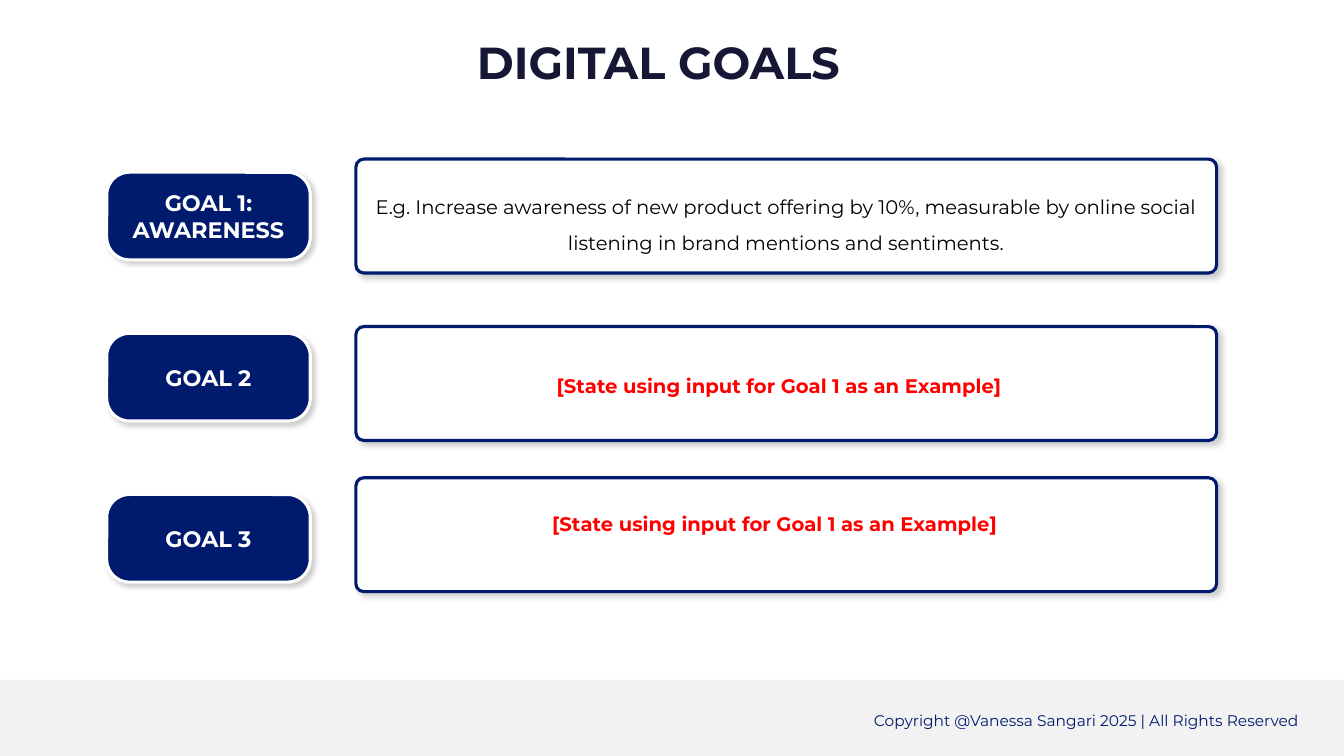
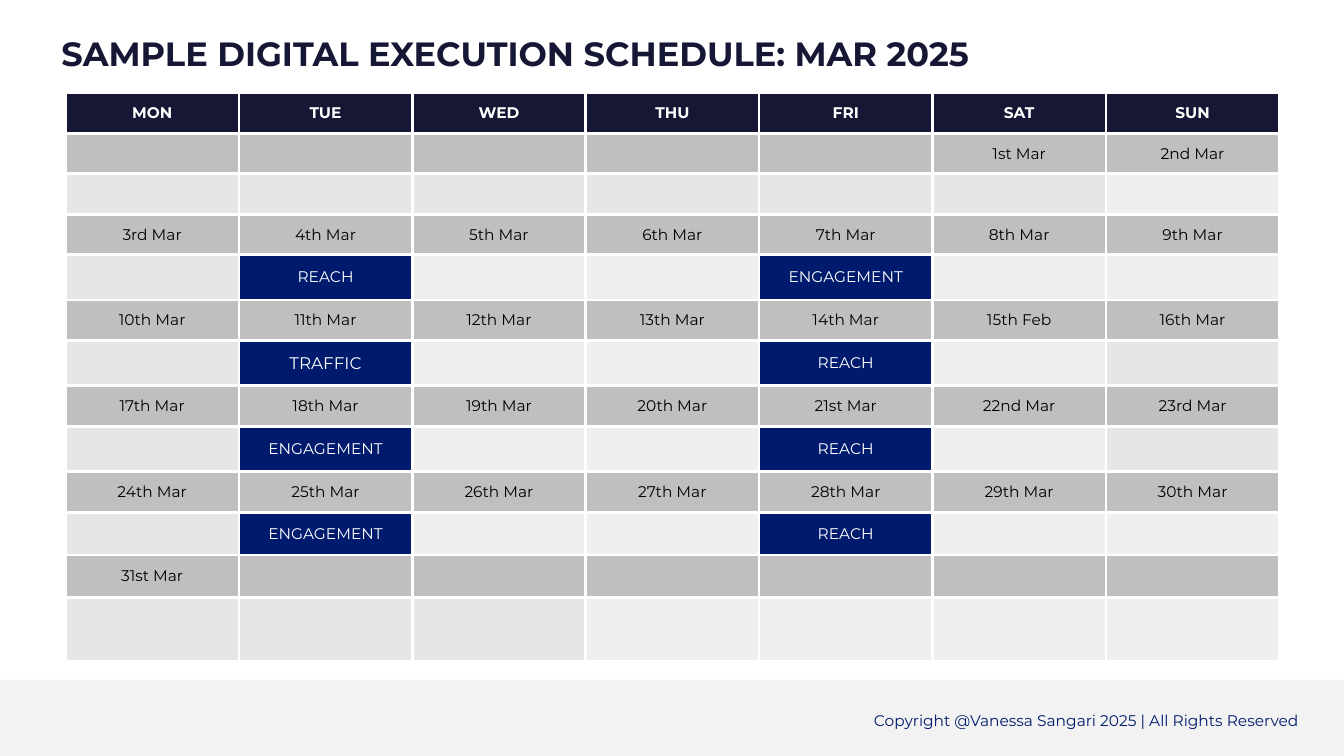
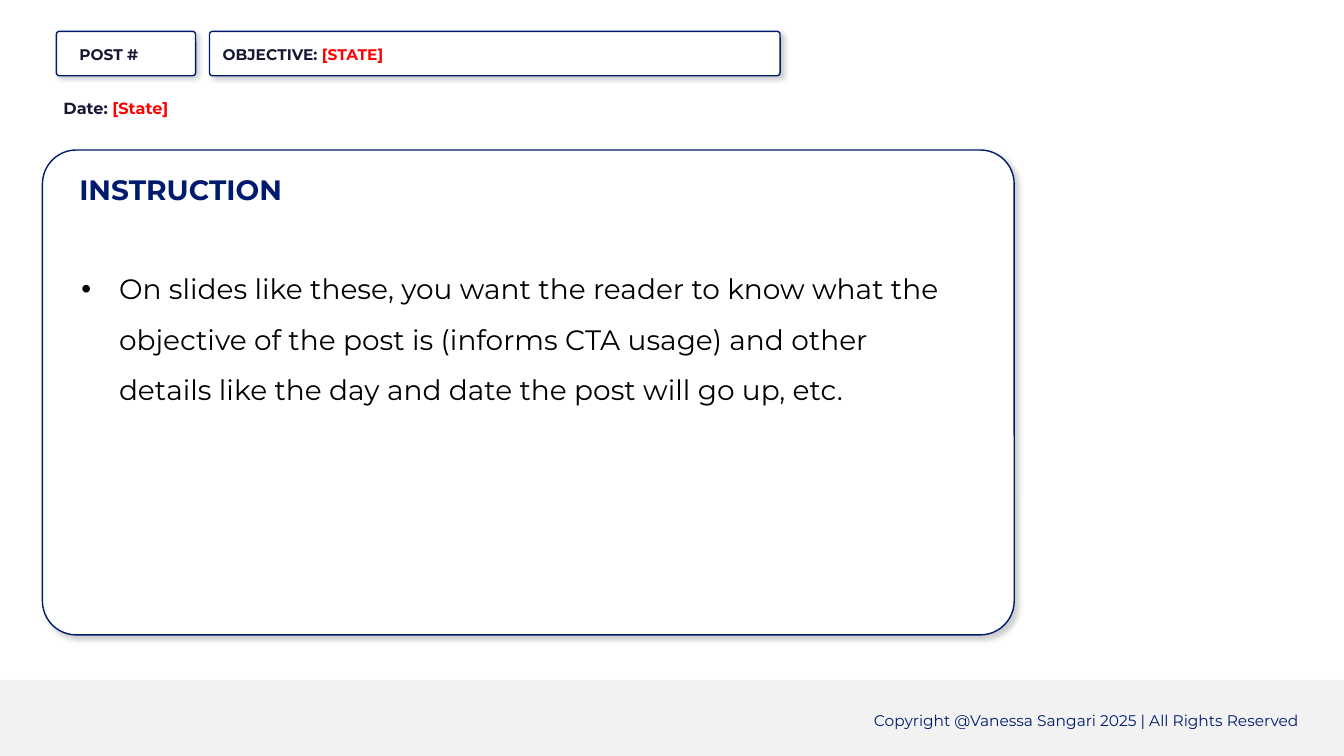
"""Build three slides of a digital marketing plan."""
import lxml.etree
import pptx
import pptx.dml.color
import pptx.enum.shapes
import pptx.enum.text
import pptx.oxml.ns
import pptx.util

Cm = pptx.util.Cm
Pt = pptx.util.Pt
ALIGN = pptx.enum.text.PP_ALIGN
MIDDLE = pptx.enum.text.MSO_ANCHOR.MIDDLE
SHAPE = pptx.enum.shapes.MSO_SHAPE

FONT = "Montserrat"
NAVY, INK, RED = "001B6D", "161735", "FF0000"
WHITE, BLACK, BAND = "FFFFFF", "000000", "F2F2F2"
SHADES = {"H": INK, "D": "BFBFBF", "E": "E7E6E6", "F": "EFEFEF", "N": NAVY}
CENTER = {"alignment": ALIGN.CENTER}
WIDE = {"alignment": ALIGN.CENTER, "line_spacing": 1.5}
SNUG = {"line_spacing": 1.15}

DAYS = "MON,TUE,WED,THU,FRI,SAT,SUN"
WEEKS = [
    (",,,,,1st Mar,2nd Mar", "EEEEEEF", ""),
    ("3rd Mar,4th Mar,5th Mar,6th Mar,7th Mar,8th Mar,9th Mar",
     "ENFFNFF", ",REACH,,,ENGAGEMENT,,"),
    ("10th Mar,11th Mar,12th Mar,13th Mar,14th Mar,15th Feb,16th Mar",
     "ENFFNFE", ",TRAFFIC,,,REACH,,"),
    ("17th Mar,18th Mar,19th Mar,20th Mar,21st Mar,22nd Mar,23rd Mar",
     "ENFFNFE", ",ENGAGEMENT,,,REACH,,"),
    ("24th Mar,25th Mar,26th Mar,27th Mar,28th Mar,29th Mar,30th Mar",
     "ENFFNFF", ",ENGAGEMENT,,,REACH,,"),
    ("31st Mar,,,,,,", "EEEFFFF", ""),
]
HEIGHTS = [1.02] * 4 + [1.14, 1.02] * 2 + [1.14, 1.04, 1.07, 1.07, 1.6]


def tint(code):
    return pptx.dml.color.RGBColor.from_string(code)


def apply(thing, values):
    for name, value in values.items():
        setattr(thing, name, value)


def node(parent, tag, **attrs):
    return lxml.etree.SubElement(parent, pptx.oxml.ns.qn(tag), attrs)


def paint(fill, code):
    fill.solid()
    fill.fore_color.rgb = tint(code)


def write(frame, lines, size, bold=False, look=None):
    for index, line in enumerate(lines):
        para = frame.add_paragraph() if index else frame.paragraphs[0]
        apply(para, look or {})
        for words, code in line:
            run = para.add_run()
            run.text = words
            apply(run.font, {"name": FONT, "size": Pt(size), "bold": bold})
            run.font.color.rgb = tint(code)


def label(slide, at, parts, size, bold=False, look=None):
    box = slide.shapes.add_textbox(*map(Cm, at))
    box.text_frame.word_wrap = True
    write(box.text_frame, [parts], size, bold, look)
    return box


def shade(shape):
    shape.shadow.inherit = False
    effects = shape.element.spPr.find(pptx.oxml.ns.qn("a:effectLst"))
    outer = node(effects, "a:outerShdw", blurRad=str(Pt(4)), dist=str(Pt(3)),
                 dir="2700000", algn="tl", rotWithShape="0")
    color = node(outer, "a:srgbClr", val=BLACK)
    node(color, "a:alpha", val="20000")


def panel(slide, at, curve, weight, fill=WHITE, edge=NAVY):
    shape = slide.shapes.add_shape(SHAPE.ROUNDED_RECTANGLE, *map(Cm, at))
    shape.adjustments[0] = curve
    paint(shape.fill, fill)
    shape.line.color.rgb = tint(edge)
    shape.line.width = Pt(weight)
    shade(shape)
    return shape


def pill(slide, top, lines):
    shape = panel(slide, (2.69, top, 5.13, 2.21), 0.26, 2.25, NAVY, WHITE)
    frame = shape.text_frame
    apply(frame, {"word_wrap": True, "vertical_anchor": MIDDLE})
    write(frame, [[(line, WHITE)] for line in lines], 16, True, CENTER)


def title(slide, at, words, size, look=None):
    label(slide, at, [(words, INK)], size, True, look)


def footer(slide, layout):
    band = slide.shapes.add_shape(SHAPE.RECTANGLE, 0, Cm(17.13), Cm(33.87), Cm(1.92))
    paint(band.fill, BAND)
    band.line.fill.background()
    band.shadow.inherit = False
    note = label(slide, (14.45, 17.55, 18.54, 0.9),
                 [("Copyright @Vanessa Sangari 2025 | All Rights Reserved", NAVY)],
                 11, look={"alignment": ALIGN.RIGHT, "line_spacing": 1.5})
    for shape in (band, note):
        layout.shapes.element.append(shape.element)


def bullet(para, indent):
    props = para._p.get_or_add_pPr()
    apply_to = {"marL": str(Cm(indent)), "indent": str(-Cm(indent))}
    props.attrib.update(apply_to)
    node(node(props, "a:buClr"), "a:srgbClr", val=BLACK)
    node(props, "a:buFont", typeface="Arial")
    node(props, "a:buChar", char="•")


def border(cell):
    props = cell._tc.get_or_add_tcPr()
    for side in "LRTB":
        line = node(props, "a:ln" + side, w=str(Pt(2.25)))
        node(node(line, "a:solidFill"), "a:srgbClr", val=WHITE)


def fill_row(table, row, words, shades, code, bold=False):
    for col, (word, key) in enumerate(zip(words, shades)):
        cell = table.cell(row, col)
        apply(cell, {"margin_top": 0, "margin_bottom": 0, "vertical_anchor": MIDDLE})
        border(cell)
        paint(cell.fill, SHADES[key])
        if word:
            size = 12 if word == "TRAFFIC" else 11
            write(cell.text_frame, [[(word, code)]], size, bold, CENTER)


def goals(slide):
    title(slide, (3.36, 0.76, 26.47, 1.63), "DIGITAL GOALS", 32, CENTER)
    names = [["GOAL 1:", "AWARENESS"], ["GOAL 2"], ["GOAL 3"]]
    for index, (lines, top) in enumerate(zip(names, (4.01, 8.23, 12.04))):
        pill(slide, 4.34 + 4.06 * index, lines)
        panel(slide, (8.97, top, 21.69, 2.87), 0.07, 2.25)
    label(slide, (8.97, 4.5, 21.69, 1.96),
          [("E.g. Increase awareness of new product offering by 10%, measurable "
            "by online social listening in brand mentions and sentiments.", BLACK)],
          14, look=WIDE)
    for at in ((8.61, 8.99, 22.05, 1.04), (8.97, 12.47, 21.11, 1.04)):
        label(slide, at, [("[State using input for Goal 1 as an Example]", RED)],
              14, True, WIDE)


def schedule(slide):
    frame = slide.shapes.add_table(len(HEIGHTS), 7, Cm(1.65), Cm(2.34),
                                   Cm(30.59), Cm(sum(HEIGHTS)))
    table = frame.table
    for col in table.columns:
        col.width = Cm(4.37)
    for row, height in zip(table.rows, HEIGHTS):
        row.height = Cm(height)
    fill_row(table, 0, DAYS.split(","), "H" * 7, WHITE, True)
    for week, (dates, shades, posts) in enumerate(WEEKS):
        row = 2 * week + 1
        fill_row(table, row, dates.split(","), "D" * 7, BLACK)
        fill_row(table, row + 1, posts.split(",") if posts else [""] * 7, shades, WHITE)
    title(slide, (1.3, 0.71, 30.94, 1.27),
          "SAMPLE DIGITAL EXECUTION SCHEDULE: MAR 2025", 24)


def post(slide):
    label(slide, (1.35, 2.29, 15.65, 0.94),
          [("Date: ", INK), ("[State]", RED)], 11.5, True, SNUG)
    for left, width in ((1.42, 3.51), (5.28, 14.38)):
        panel(slide, (left, 0.79, width, 1.12), 0.07, 1)
    label(slide, (1.75, 0.94, 3.51, 0.79), [("POST #", INK)], 11, True, SNUG)
    label(slide, (5.36, 0.94, 7.59, 0.79),
          [("OBJECTIVE: ", INK), ("[STATE]", RED)], 11, True, SNUG)
    panel(slide, (1.07, 3.78, 24.49, 12.22), 0.07, 1)
    label(slide, (1.75, 4.22, 18.36, 1.12), [("INSTRUCTION", NAVY)], 20, True)
    box = label(slide, (1.8, 6.3, 22.48, 3.96),
                [("On slides like these, you want the reader to know what the "
                  "objective of the post is (informs CTA usage) and other details "
                  "like the day and date the post will go up, etc.", BLACK)],
                20, look={"line_spacing": 1.5})
    bullet(box.text_frame.paragraphs[0], 0.95)


def main():
    deck = pptx.Presentation()
    apply(deck, {"slide_width": Cm(33.87), "slide_height": Cm(19.05)})
    blank = deck.slide_layouts[6]
    for index, build in enumerate((goals, schedule, post)):
        slide = deck.slides.add_slide(blank)
        if index == 0:
            footer(slide, blank)
        build(slide)
    deck.save("out.pptx")


if __name__ == "__main__":
    main()
